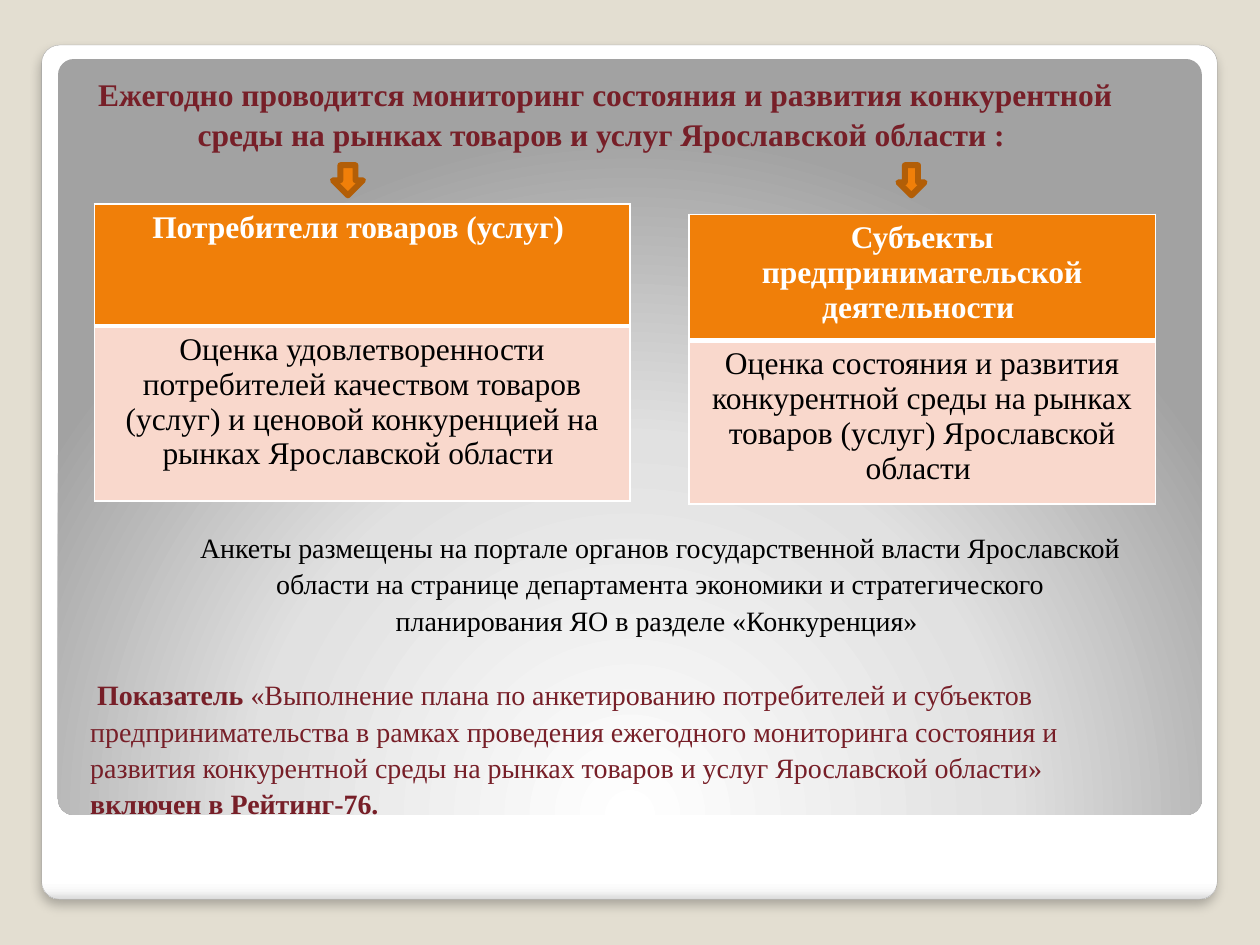
from dataclasses import dataclass
from typing import NamedTuple, Optional

from lxml import etree
from pptx import Presentation
from pptx import util as u
from pptx.dml.color import RGBColor
from pptx.enum import shapes, text
from pptx.oxml import parse_xml
from pptx.oxml.ns import nsdecls, qn


@dataclass(frozen=True)
class Theme:
    font: str = "Times New Roman"
    large: int = 18
    medium: int = 16
    background: str = "E3DED1"
    accent: str = "F07F09"
    accent_dark: str = "B25E07"
    pale: str = "F9D8CC"
    wine: str = "771F28"
    black: str = "000000"
    white: str = "FFFFFF"
    panel_edge: str = "A4A4A4"


class Box(NamedTuple):
    left: float
    top: float
    width: float
    height: float

    def lengths(self) -> list:
        return [u.Cm(value) for value in self]


class Run(NamedTuple):
    words: str
    bold: bool = False


class Card(NamedTuple):
    left: float
    top: float
    width: float
    rows: tuple
    title: str
    body: str


THEME = Theme()

CARDS = (
    Card(1.9, 4.11, 10.8, (2.46, 3.53), "Потребители товаров (услуг) ",
         "Оценка удовлетворенности потребителей качеством товаров (услуг) "
         "и ценовой конкуренцией на рынках Ярославской области "),
    Card(13.89, 4.32, 9.4, (2.54, 3.3),
         "Субъекты предпринимательской деятельности ",
         "Оценка состояния и развития конкурентной среды на рынках товаров "
         "(услуг) Ярославской области "),
)

ARROWS = (Box(6.71, 3.33, 0.61, 0.61), Box(18.11, 3.33, 0.53, 0.61))


def rgb(value: str) -> RGBColor:
    return RGBColor.from_string(value)


def write(frame, runs: list, *, size: int, color: str, centered: bool = True,
          spacing: Optional[float] = None) -> None:
    paragraph = frame.paragraphs[0]
    paragraph.alignment = text.PP_ALIGN.CENTER if centered else text.PP_ALIGN.LEFT
    if spacing:
        paragraph.line_spacing = spacing
    for words, bold in runs:
        run = paragraph.add_run()
        run.text = words
        run.font.name = THEME.font
        run.font.size = u.Pt(size)
        run.font.bold = bold
        run.font.color.rgb = rgb(color)


def add_text(slide, box: Box, runs: list, **style) -> None:
    frame = slide.shapes.add_textbox(*box.lengths()).text_frame
    frame.word_wrap = True
    frame.auto_size = text.MSO_AUTO_SIZE.SHAPE_TO_FIT_TEXT
    write(frame, runs, spacing=1.08, **style)


def add_panel(slide, box: Box, stops: list, direction: str):
    shape = slide.shapes.add_shape(
        shapes.MSO_SHAPE.ROUNDED_RECTANGLE, *box.lengths())
    shape.adjustments[0] = 0.021
    colors = "".join(
        f'<a:gs pos="{position * 1000}"><a:srgbClr val="{color}"/></a:gs>'
        for position, color in stops)
    shape.element.spPr.append(parse_xml(
        f'<a:gradFill {nsdecls("a")} rotWithShape="1">'
        f"<a:gsLst>{colors}</a:gsLst>{direction}</a:gradFill>"))
    shape.line.fill.background()
    shape.shadow.inherit = False
    return shape


def add_shadow(shape) -> None:
    effects = shape.element.spPr.find(qn("a:effectLst"))
    effects.append(parse_xml(
        f'<a:outerShdw {nsdecls("a")} blurRad="{u.Pt(6)}" dist="{u.Pt(4)}" '
        f'dir="5400000" algn="tl" rotWithShape="0"><a:srgbClr val="{THEME.black}">'
        '<a:alpha val="25000"/></a:srgbClr></a:outerShdw>'))


def add_arrow(slide, box: Box) -> None:
    shape = slide.shapes.add_shape(shapes.MSO_SHAPE.DOWN_ARROW, *box.lengths())
    shape.shadow.inherit = False
    shape.fill.solid()
    shape.fill.fore_color.rgb = rgb(THEME.accent)
    shape.line.color.rgb = rgb(THEME.accent_dark)
    shape.line.width = u.Pt(3.35)


def style_cell(cell, fill: str, top: float, bottom: float) -> None:
    properties = cell._tc.get_or_add_tcPr()
    for side, width in {"L": 1, "R": 1, "T": top, "B": bottom}.items():
        border = etree.SubElement(properties, qn(f"a:ln{side}"), w=str(u.Pt(width)))
        solid = etree.SubElement(border, qn("a:solidFill"))
        etree.SubElement(solid, qn("a:srgbClr"), val=THEME.white)
    cell.fill.solid()
    cell.fill.fore_color.rgb = rgb(fill)


def add_card(slide, card: Card) -> None:
    box = Box(card.left, card.top, card.width, sum(card.rows))
    table = slide.shapes.add_table(2, 1, *box.lengths()).table
    for row, height in zip(table.rows, card.rows):
        row.height = u.Cm(height)
    title, body = table.cell(0, 0), table.cell(1, 0)
    style_cell(title, THEME.accent, top=1, bottom=3)
    style_cell(body, THEME.pale, top=3, bottom=1)
    write(title.text_frame, [Run(card.title, True)],
          size=THEME.large, color=THEME.white)
    write(body.text_frame, [Run(card.body)], size=THEME.large, color=THEME.black)


def main() -> None:
    presentation = Presentation()
    presentation.slide_width, presentation.slide_height = u.Cm(25.4), u.Cm(19.05)
    slide = presentation.slides.add_slide(presentation.slide_layouts[6])
    slide.background.fill.solid()
    slide.background.fill.fore_color.rgb = rgb(THEME.background)

    frame = add_panel(
        slide, Box(0.84, 0.91, 23.7, 17.22),
        [(0, THEME.white), (98, THEME.white), (99, "F7F7F7"), (100, "DADADA")],
        '<a:lin ang="5400000" scaled="0"/>')
    frame.line.color.rgb = rgb(THEME.panel_edge)
    frame.line.width = u.Pt(0.16)
    add_shadow(frame)
    add_panel(
        slide, Box(1.17, 1.19, 23.06, 15.24),
        [(0, THEME.white), (55, "E1E1E1"), (100, "A2A2A2")],
        '<a:path path="circle"><a:fillToRect l="50000" t="175000" '
        'r="50000" b="-75000"/></a:path>')

    add_text(slide, Box(1.5, 1.32, 21.41, 1.8), [
        Run("Ежегодно проводится мониторинг состояния и развития конкурентной "
            "среды на рынках товаров и услуг Ярославской области : ", True),
    ], size=THEME.large, color=THEME.wine)
    for card in CARDS:
        add_card(slide, card)
    add_text(slide, Box(3.71, 10.52, 19.2, 2.31), [
        Run("Анкеты размещены на портале органов государственной власти "
            "Ярославской области на странице департамента экономики и "
            "стратегического планирования ЯО в разделе «Конкуренция» "),
    ], size=THEME.medium, color=THEME.black)
    for arrow in ARROWS:
        add_arrow(slide, arrow)
    add_text(slide, Box(1.57, 13.49, 22, 3), [
        Run(" "),
        Run("Показатель", True),
        Run(" «Выполнение плана по анкетированию потребителей и субъектов "
            "предпринимательства в рамках проведения ежегодного мониторинга "
            "состояния и развития конкурентной среды на рынках товаров и услуг "
            "Ярославской области» "),
        Run("включен в Рейтинг-76.", True),
    ], size=THEME.medium, color=THEME.wine, centered=False)

    presentation.save("out.pptx")


if __name__ == "__main__":
    main()
